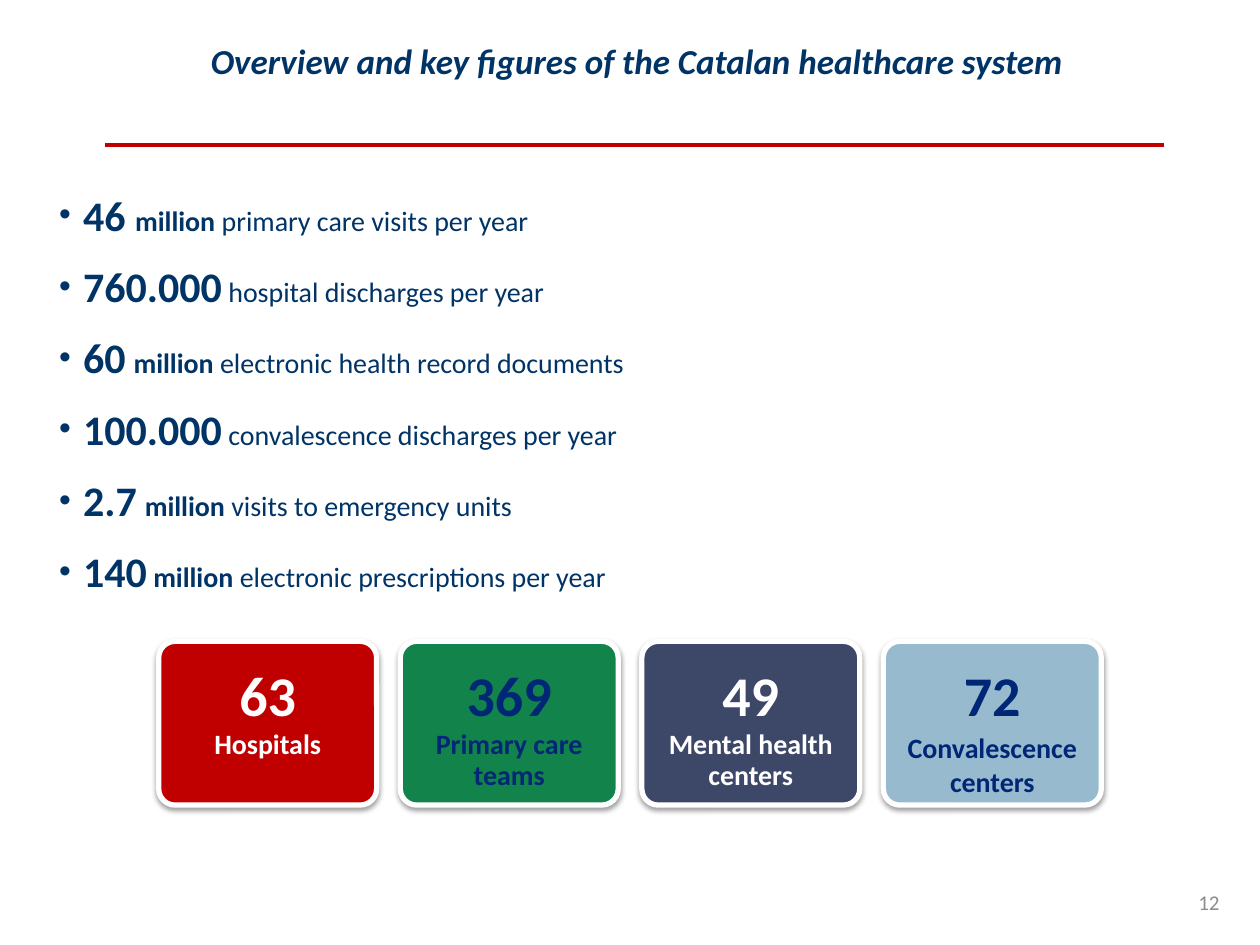
from lxml import etree
from pptx import Presentation
from pptx.dml.color import RGBColor
from pptx.enum.shapes import MSO_CONNECTOR, MSO_SHAPE
from pptx.enum.text import MSO_ANCHOR, MSO_AUTO_SIZE, PP_ALIGN
from pptx.oxml.ns import qn
from pptx.util import Inches, Pt

STRAIGHT = MSO_CONNECTOR.STRAIGHT
ROUNDED = MSO_SHAPE.ROUNDED_RECTANGLE
TOP, MIDDLE = MSO_ANCHOR.TOP, MSO_ANCHOR.MIDDLE
LEFT, CENTER = PP_ALIGN.LEFT, PP_ALIGN.CENTER

FONT = "Calibri"
COLORS = {
    "navy": "003366", "blue": "002776", "white": "FFFFFF", "red": "C00000",
    "green": "11834B", "slate": "3D4869", "sky": "97BACF", "gray": "8C8C8C",
}

TITLE = "Overview and key figures of the Catalan healthcare system"
PAGE_NUMBER = "12"
# Each figure: number, gap with its size, bold unit, description
FIGURES = [
    ("46 ", "", 16, "million ", "primary care visits per year"),
    ("760.000", " ", 16, "", "hospital discharges per year"),
    ("60", " ", 20, "million ", "electronic health record documents"),
    ("100.000", " ", 16, "", "convalescence discharges per year"),
    ("2.7", " ", 20, "million ", "visits to emergency units"),
    ("140", " ", 16, "million ", "electronic prescriptions per year"),
]
# Each card: number, label, fill, text colour, label line spacing
CARDS = [
    ("63", "Hospitals", "red", "white", 0.9),
    ("369", "Primary care teams", "green", "blue", 0.9),
    ("49", "Mental health centers", "slate", "white", 0.9),
    ("72", "Convalescence centers", "sky", "blue", 1.0),
]
CARD_LEFT, CARD_TOP, CARD_WIDTH, CARD_HEIGHT = 1.26, 5.09, 1.73, 1.3
CARD_PITCH = 1.917


def rgb(name):
    return RGBColor.from_string(COLORS[name])


def place(shape, left, top, width, height):
    shape.left, shape.top = Inches(left), Inches(top)
    shape.width, shape.height = Inches(width), Inches(height)


def set_frame(frame, anchor, side, edge):
    frame.word_wrap = True
    frame.auto_size = MSO_AUTO_SIZE.NONE
    frame.vertical_anchor = anchor
    frame.margin_left = frame.margin_right = Inches(side)
    frame.margin_top = frame.margin_bottom = Inches(edge)


def style(para, size, color, align=CENTER, bold=True, italic=False):
    para.alignment = align
    font = para.font
    font.name, font.size, font.color.rgb = FONT, Pt(size), rgb(color)
    font.bold, font.italic = bold, italic


def add_label(page, text, area, size, color, anchor=TOP, edge=0.05, bold=True):
    box = page.shapes.add_textbox(*map(Inches, area))
    set_frame(box.text_frame, anchor, 0.12, edge)
    para = box.text_frame.paragraphs[0]
    para.text = text
    style(para, size, color, bold=bold)
    return para


def add_bullet(para):
    properties = para._p.get_or_add_pPr()
    properties.set("marL", str(Inches(0.19)))
    properties.set("indent", str(-Inches(0.19)))
    for tag, key, value in (("buSzPct", "val", "80000"),
                            ("buFont", "typeface", "Arial"),
                            ("buChar", "char", "•")):
        etree.SubElement(properties, qn(f"a:{tag}")).set(key, value)


def add_soft_shadow(shape):
    shape.shadow.inherit = False
    effects = shape._element.spPr.find(qn("a:effectLst"))
    shadow = etree.SubElement(
        effects, qn("a:outerShdw"), blurRad=str(Pt(3.1)), dist=str(Pt(1.6)),
        dir="5400000", rotWithShape="0")
    color = etree.SubElement(shadow, qn("a:srgbClr"), val="000000")
    etree.SubElement(color, qn("a:alpha"), val="38000")


def add_title(page):
    title = page.shapes.title
    place(title, 0.32, 0.31, 9.47, 0.34)
    set_frame(title.text_frame, TOP, 0, 0)
    title.text_frame.text = TITLE
    style(title.text_frame.paragraphs[0], 20, "navy", italic=True)

    rule = page.shapes.add_connector(
        STRAIGHT, Inches(0.83), Inches(1.15), Inches(9.24), Inches(1.15))
    rule.line.color.rgb, rule.line.width = rgb("red"), Pt(2.25)
    etree.SubElement(rule._element.spPr, qn("a:effectLst"))


def add_figures(page):
    body = page.placeholders[1]
    place(body, 0.36, 1.45, 9.28, 3.37)
    frame = body.text_frame
    set_frame(frame, TOP, 0.11, 0.05)
    for index, (number, gap, gap_size, unit, description) in enumerate(FIGURES):
        para = frame.add_paragraph() if index else frame.paragraphs[0]
        add_bullet(para)
        para.space_before = Pt(12 if index else 0)
        style(para, 16, "navy", LEFT, bold=False)
        for text, size, bold in ((number, 24, True), (gap, gap_size, True),
                                 (unit, 16, True), (description, 16, False)):
            if text:
                span = para.add_run()
                span.text = text
                span.font.size, span.font.bold = Pt(size), bold


def add_card(page, column, number, label, fill, color, spacing):
    left = CARD_LEFT + column * CARD_PITCH
    card = page.shapes.add_shape(
        ROUNDED, *map(Inches, (left, CARD_TOP, CARD_WIDTH, CARD_HEIGHT)))
    card.adjustments[0] = 0.1
    card.fill.solid()
    card.fill.fore_color.rgb = rgb(fill)
    card.line.color.rgb, card.line.width = rgb("white"), Pt(3)
    add_soft_shadow(card)

    add_label(page, number, (left, CARD_TOP + 0.1, CARD_WIDTH, 0.64), 32, color)
    area = (left - 0.1, CARD_TOP + 0.71, CARD_WIDTH + 0.2, 0.52)
    para = add_label(page, label, area, 16, color, edge=0)
    para.line_spacing = spacing


def main():
    deck = Presentation()
    deck.slide_width, deck.slide_height = Inches(10), Inches(7.5)
    page = deck.slides.add_slide(deck.slide_layouts[1])
    add_title(page)
    add_figures(page)
    for column, card in enumerate(CARDS):
        add_card(page, column, *card)
    add_label(page, PAGE_NUMBER, (9.21, 6.9, 0.77, 0.52), 12, "gray",
              MIDDLE, bold=False)
    deck.save("out.pptx")


if __name__ == "__main__":
    main()
